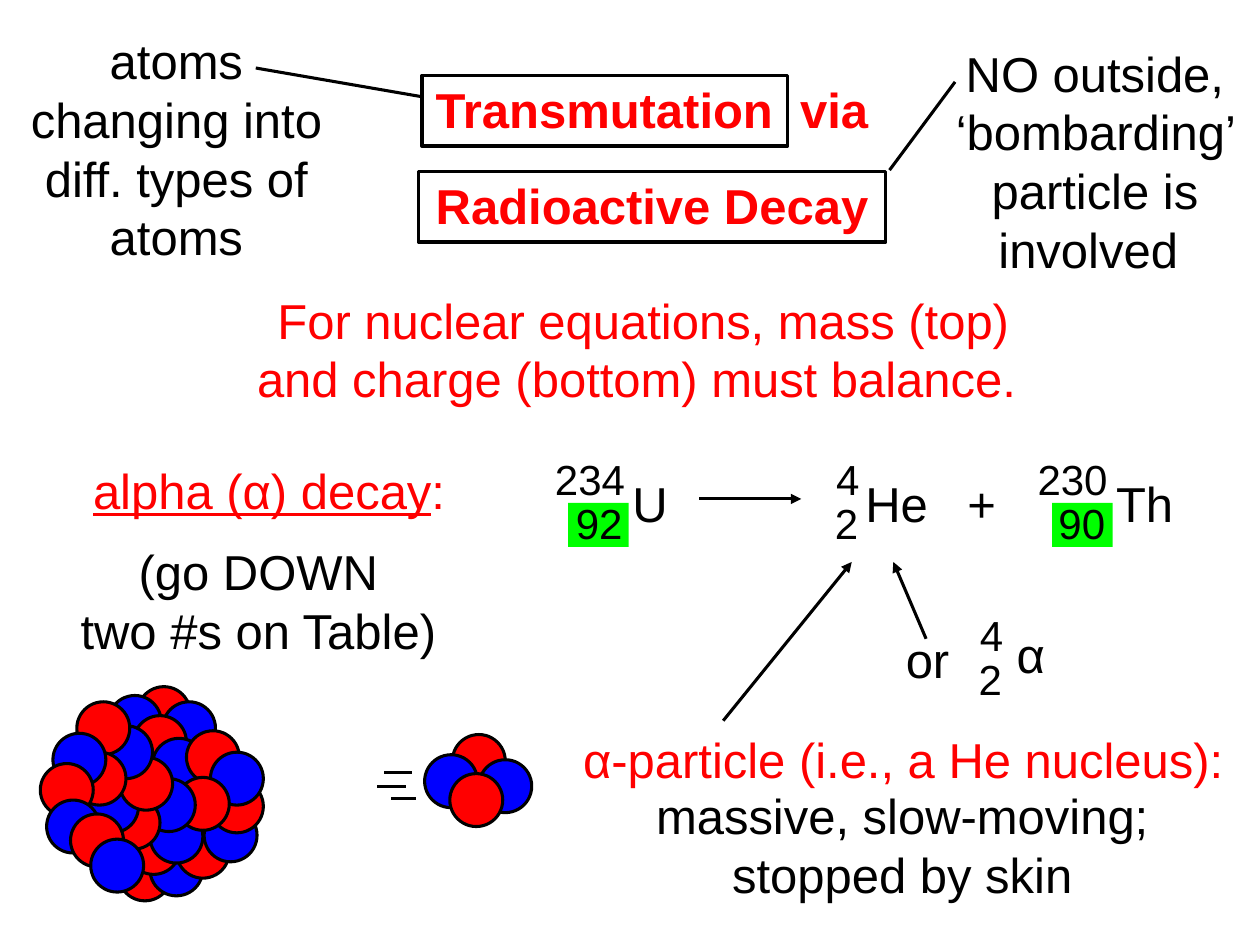
"""Builds a slide on transmutation by radioactive decay, with an alpha decay example."""
import pptx
import pptx.dml.color
import pptx.enum.shapes
import pptx.enum.text
import pptx.util
from lxml import etree

PX = pptx.util.Inches(1) // 100
RED, BLUE, GREEN, BLACK = "FF0000", "0000FF", "00FF00", "000000"
BALL = 42
rgb = pptx.dml.color.RGBColor.from_string
Pt = pptx.util.Pt
MSO = pptx.enum.shapes.MSO_SHAPE
LEFT = pptx.enum.text.PP_ALIGN.LEFT
CENTER = pptx.enum.text.PP_ALIGN.CENTER
RIGHT = pptx.enum.text.PP_ALIGN.RIGHT
TOP = pptx.enum.text.MSO_ANCHOR.TOP
MIDDLE = pptx.enum.text.MSO_ANCHOR.MIDDLE

prs = pptx.Presentation()
prs.slide_width, prs.slide_height = 1000 * PX, 750 * PX
s = prs.slides.add_slide(prs.slide_layouts[6])
page = s.shapes


def add_shape(parent, kind, at, fill=None, line=None, rotation=0):
    sp = parent.add_shape(kind, *(v * PX for v in at))
    sp.shadow.inherit = False
    sp.rotation = rotation
    if fill:
        sp.fill.solid()
        sp.fill.fore_color.rgb = rgb(fill)
    else:
        sp.fill.background()
    if line:
        sp.line.color.rgb = rgb(BLACK)
        sp.line.width = Pt(line)
    else:
        sp.line.fill.background()


def add_text(parent, at, lines, color=BLACK, align=LEFT, anchor=TOP, size=28, wrap=False, bold=None):
    tf = parent.add_textbox(*(v * PX for v in at)).text_frame
    frame = {"word_wrap": wrap, "vertical_anchor": anchor,
             "auto_size": pptx.enum.text.MSO_AUTO_SIZE.SHAPE_TO_FIT_TEXT}
    for name, value in frame.items():
        setattr(tf, name, value)
    font = {"name": "Arial", "size": Pt(size), "bold": bold}
    for i, line in enumerate(lines):
        p = tf.add_paragraph() if i else tf.paragraphs[0]
        p.alignment = align
        for part in line.split("|"):
            r = p.add_run()
            r.text = part
            r.font.color.rgb = rgb(color)
            for name, value in font.items():
                setattr(r.font, name, value)
    return tf


for x in (835, 451):
    add_shape(page, MSO.RECTANGLE, (x, 399, 48, 35), GREEN)

title = add_text(page, (336, 57, 368, 135), ["Transmutation| |via", "Radioactive Decay"],
                 RED, anchor=MIDDLE, bold=True)
title.paragraphs[0].runs[1].font._element.set("spc", "780")
title.paragraphs[1].space_before = Pt(20.7)
add_text(page, (189, 225, 643, 104),
         ["For nuclear equations, mass (top) and charge (bottom) must balance. "],
         RED, CENTER, MIDDLE, wrap=True)
heading = add_text(page, (64, 360, 313, 57), ["alpha (α) decay|:"], RED, anchor=MIDDLE)
heading.paragraphs[0].runs[0].font.underline = True
add_text(page, (453, 574, 543, 57), ["α-particle (i.e., a He nucleus):"], RED, anchor=MIDDLE)
add_text(page, (510, 619, 412, 103), ["massive, slow-moving;", "stopped by skin"],
         align=CENTER, anchor=MIDDLE)
add_text(page, (51, 425, 308, 103), ["(go DOWN", "two #s on Table)"], align=CENTER)

alpha_note, changing, outside, particle, nucleus = (
    page.add_group_shape().shapes for _ in range(5))

nuclides = [
    (page, 355, (430, 76, "234"), (447, 57, "92"), (492, 371, 48, "U")),
    (page, 355, (813, 76, "230"), (830, 57, "90"), (876, 371, 66, "Th")),
    (page, 355, (653, 39, "4"), (652, 39, "2"), (677, 371, 70, "He")),
    (alpha_note, 479, (767, 39, "4"), (766, 39, "2"), (797, 491, 45, "α")),
]
for parent, top, mass, charge, (x, y, w, symbol) in nuclides:
    for row, (left, width, number) in enumerate((mass, charge)):
        add_text(parent, (left, top + 35 * row, width, 50), [number], align=RIGHT, size=24)
    add_text(parent, (x, y, w, 57), [symbol])
add_text(page, (758, 371, 43, 57), ["+"])
add_text(alpha_note, (709, 495, 55, 57), ["or"])

for parent, at, note in (
        (changing, (5, 18, 270, 199), "atoms changing into diff. types of atoms"),
        (outside, (734, 28, 270, 199), "NO outside, ‘bombarding’ particle is involved ")):
    add_text(parent, at, [note], align=CENTER, anchor=MIDDLE, wrap=True)

for at in ((332, 136, 371, 56), (335, 60, 290, 56)):
    add_shape(page, MSO.RECTANGLE, at, line=2)

particle_balls = [(359, 583, RED), (380, 603, BLUE), (337, 599, BLUE), (357, 614, RED)]
nucleus_balls = [
    (109, 545, RED), (129, 557, BLUE), (86, 552, BLUE), (106, 568, RED), (121, 586, BLUE),
    (148, 580, RED), (94, 673, RED), (119, 669, BLUE), (140, 655, RED), (162, 642, BLUE),
    (167, 619, RED), (167, 597, BLUE), (101, 652, RED), (119, 643, BLUE), (140, 617, RED),
    (113, 618, BLUE), (85, 632, RED), (68, 619, BLUE), (95, 601, RED), (79, 576, BLUE),
    (61, 557, RED), (58, 597, RED), (42, 582, BLUE), (32, 606, RED), (37, 635, BLUE),
    (56, 646, RED), (72, 666, BLUE),
]
for parent, balls in ((particle, particle_balls), (nucleus, nucleus_balls)):
    for x, y, color in balls:
        add_shape(parent, MSO.OVAL, (x, y, BALL, BALL), color, 1.75, 292.4)

lines = [
    (page, (555, 396, 636, 396), True),
    (page, (574, 572, 676, 446), True),
    (alpha_note, (735, 507, 709, 446), True),
    (changing, (203, 54, 336, 77), False),
    (outside, (706, 135, 758, 65), False),
    (particle, (327, 613, 305, 613), False),
    (particle, (322, 624, 299, 624), False),
    (particle, (330, 634, 310, 634), False),
]
for parent, ends, arrow in lines:
    c = parent.add_connector(pptx.enum.shapes.MSO_CONNECTOR.STRAIGHT, *(v * PX for v in ends))
    c.line.color.rgb = rgb(BLACK)
    c.line.width = Pt(1.75)
    ns = "{%s}" % c.line._get_or_add_ln().nsmap["a"]
    if arrow:
        etree.SubElement(c.line._get_or_add_ln(), ns + "tailEnd", type="triangle")
    etree.SubElement(c._element.spPr, ns + "effectLst")

prs.save("out.pptx")
